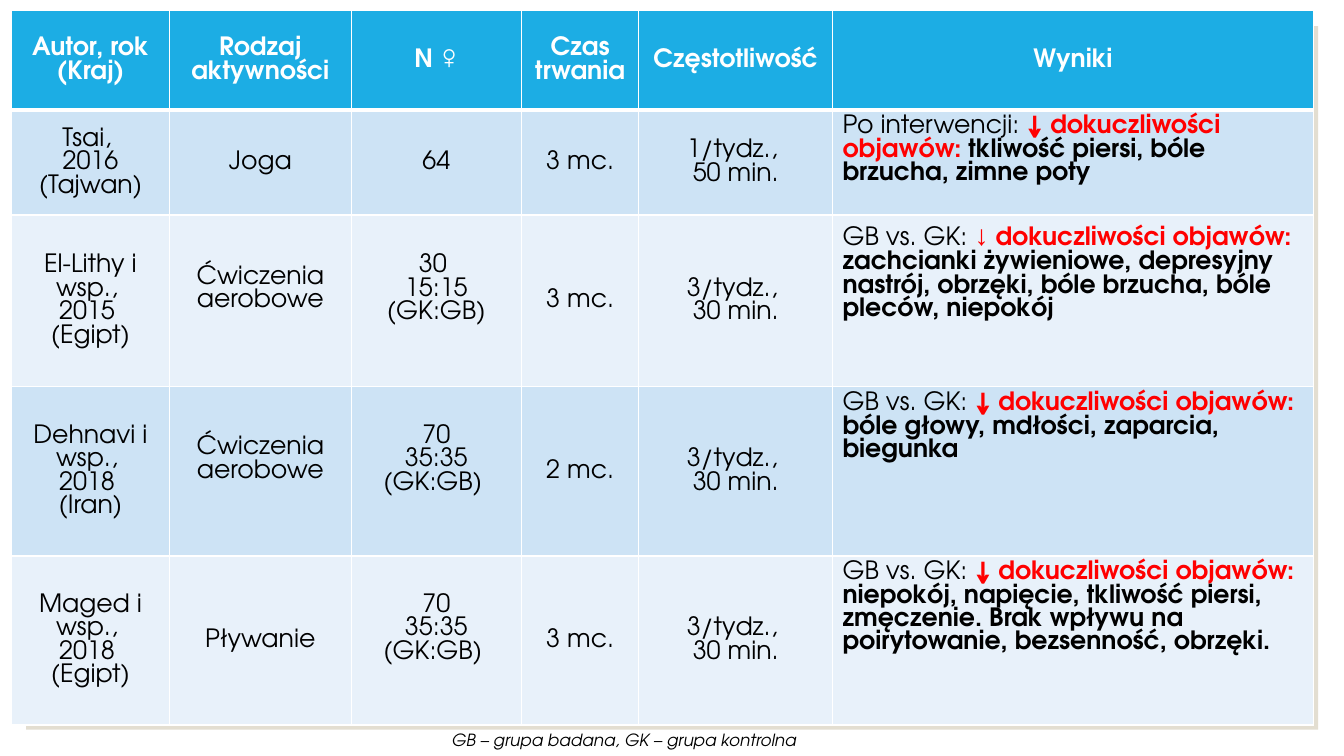
from dataclasses import dataclass

from lxml.etree import SubElement
from pptx import Presentation
from pptx.dml.color import RGBColor
from pptx.enum.shapes import MSO_SHAPE
from pptx.enum.text import MSO_ANCHOR, PP_ALIGN
from pptx.oxml import parse_xml
from pptx.oxml.ns import nsdecls, qn
from pptx.util import Cm, Pt

HEADINGS = ["Autor, rok (Kraj)", "Rodzaj aktywności", "N ♀", "Czas trwania", "Częstotliwość", "Wyniki"]
FEWER = [("↓ dokuczliwości objawów: ", "decrease")]
FEWER_THIN_ARROW = [("↓", "arrow"), (" dokuczliwości objawów: ", "decrease")]
COMPARED = [("GB vs. GK: ", "plain")]
STUDIES = [
    (["Tsai, \n2016 (Tajwan)", "Joga", "64", "3 mc.", "1/tydz., \n50 min."],
     [("Po interwencji: ", "plain"), *FEWER,
      ("tkliwość piersi, bóle brzucha, zimne poty", "symptoms")]),
    (["El-Lithy i wsp., \n2015 \n(Egipt)", "Ćwiczenia aerobowe",
      "30 \n15:15\n(GK:GB)", "3 mc.", "3/tydz., \n30 min."],
     [*COMPARED, *FEWER_THIN_ARROW,
      ("zachcianki żywieniowe, depresyjny nastrój, obrzęki, bóle brzucha, bóle pleców, niepokój",
       "symptoms")]),
    (["Dehnavi i wsp., \n2018 \n(Iran)", "Ćwiczenia aerobowe",
      "70\n35:35\n(GK:GB) ", "2 mc.", "3/tydz., \n30 min."],
     [*COMPARED, *FEWER, ("bóle głowy, mdłości, zaparcia, biegunka", "symptoms")]),
    (["Maged i wsp., \n2018 \n(Egipt)", "Pływanie",
      "70\n35:35\n(GK:GB) ", "3 mc.", "3/tydz., \n30 min."],
     [*COMPARED, *FEWER,
      ("niepokój, napięcie, tkliwość piersi, zmęczenie. Brak wpływu na poirytowanie, "
       "bezsenność, obrzęki.", "symptoms")]),
]
LEGEND = "GB – grupa badana, GK – grupa kontrolna"
COLUMN_WIDTHS = [3.98, 4.58, 4.29, 2.96, 4.88, 12.12]
ROW_HEIGHTS = [2.51, 2.64, 4.33, 4.26, 4.26]
RAISED_CELLS = {"Ćwiczenia aerobowe", "30 \n15:15\n(GK:GB)", "70\n35:35\n(GK:GB) "}


@dataclass(frozen=True)
class Theme:
    font: str = "TeX Gyre Adventor"
    arrow_font: str = "Times New Roman"
    body: int = 18
    arrow: int = 20
    legend: int = 12
    white: str = "FFFFFF"
    black: str = "000000"
    red: str = "FF0000"
    header: str = "1CADE4"
    bands: tuple = ("CDE3F5", "E8F1FA")
    panel: str = "E3DED1"


THEME = Theme()
STYLES = {
    "heading": (THEME.font, THEME.body, THEME.white, True, False),
    "plain": (THEME.font, THEME.body, THEME.black, False, False),
    "decrease": (THEME.font, THEME.body, THEME.red, True, False),
    "arrow": (THEME.arrow_font, THEME.arrow, THEME.red, True, False),
    "symptoms": (THEME.font, THEME.body, THEME.black, True, False),
    "legend": (THEME.font, THEME.legend, THEME.black, False, True),
}


def style_run(run, style):
    font = run.font
    font.name, size, color, font.bold, font.italic = STYLES[style]
    font.size = Pt(size)
    font.color.rgb = RGBColor.from_string(color)


def style_frame(frame, style, alignment):
    for paragraph in frame.paragraphs:
        paragraph.alignment = alignment
        for run in paragraph.runs:
            style_run(run, style)


def paint_cell(cell, color, bottom_width):
    cell.fill.solid()
    cell.fill.fore_color.rgb = RGBColor.from_string(color)
    properties = cell.fill._xPr
    for position, side in enumerate("LRTB"):
        width = Pt(bottom_width if side == "B" else 1)
        border = parse_xml(f'<a:ln{side} {nsdecls("a")} w="{width}"/>')
        fill = SubElement(border, qn("a:solidFill"))
        SubElement(fill, qn("a:srgbClr")).set("val", THEME.white)
        properties.insert(position, border)


def write_centred(cell, words, style):
    cell.text_frame.text = words
    cell.vertical_anchor = MSO_ANCHOR.MIDDLE
    style_frame(cell.text_frame, style, PP_ALIGN.CENTER)
    if words in RAISED_CELLS:
        cell.margin_bottom = Cm(0.72)


def write_findings(cell, findings):
    paragraph = cell.text_frame.paragraphs[0]
    for words, style in findings:
        run = paragraph.add_run()
        run.text = words
        style_run(run, style)


def add_panel(slide):
    panel = slide.shapes.add_shape(MSO_SHAPE.RECTANGLE, Cm(0.66), Cm(0.66), Cm(32.56), Cm(17.73))
    panel.shadow.inherit = False
    panel.fill.solid()
    panel.fill.fore_color.rgb = RGBColor.from_string(THEME.panel)
    panel.line.fill.background()


def add_studies(slide):
    studies = slide.shapes.add_table(
        len(ROW_HEIGHTS), len(COLUMN_WIDTHS), Cm(0.29), Cm(0.27),
        Cm(sum(COLUMN_WIDTHS)), Cm(sum(ROW_HEIGHTS))).table
    for column, width in zip(studies.columns, COLUMN_WIDTHS):
        column.width = Cm(width)
    for row, height in zip(studies.rows, ROW_HEIGHTS):
        row.height = Cm(height)
    for cell, heading in zip(studies.rows[0].cells, HEADINGS):
        write_centred(cell, heading, "heading")
        paint_cell(cell, THEME.header, 3)
    for number, (details, findings) in enumerate(STUDIES):
        cells = list(studies.rows[number + 1].cells)
        for cell, words in zip(cells, details):
            write_centred(cell, words, "plain")
        write_findings(cells[-1], findings)
        for cell in cells:
            paint_cell(cell, THEME.bands[number % 2], 1)


def add_legend(slide):
    legend = slide.shapes.add_textbox(Cm(11.13), Cm(18.26), Cm(9.35), Cm(0.76)).text_frame
    legend.word_wrap = False
    legend.text = LEGEND
    style_frame(legend, "legend", PP_ALIGN.LEFT)


def main():
    """Build the slide that compares studies of physical activity."""
    deck = Presentation()
    deck.slide_width, deck.slide_height = Cm(33.87), Cm(19.05)
    slide = deck.slides.add_slide(deck.slide_layouts[6])
    add_panel(slide)
    add_studies(slide)
    add_legend(slide)
    deck.save("out.pptx")


if __name__ == "__main__":
    main()
